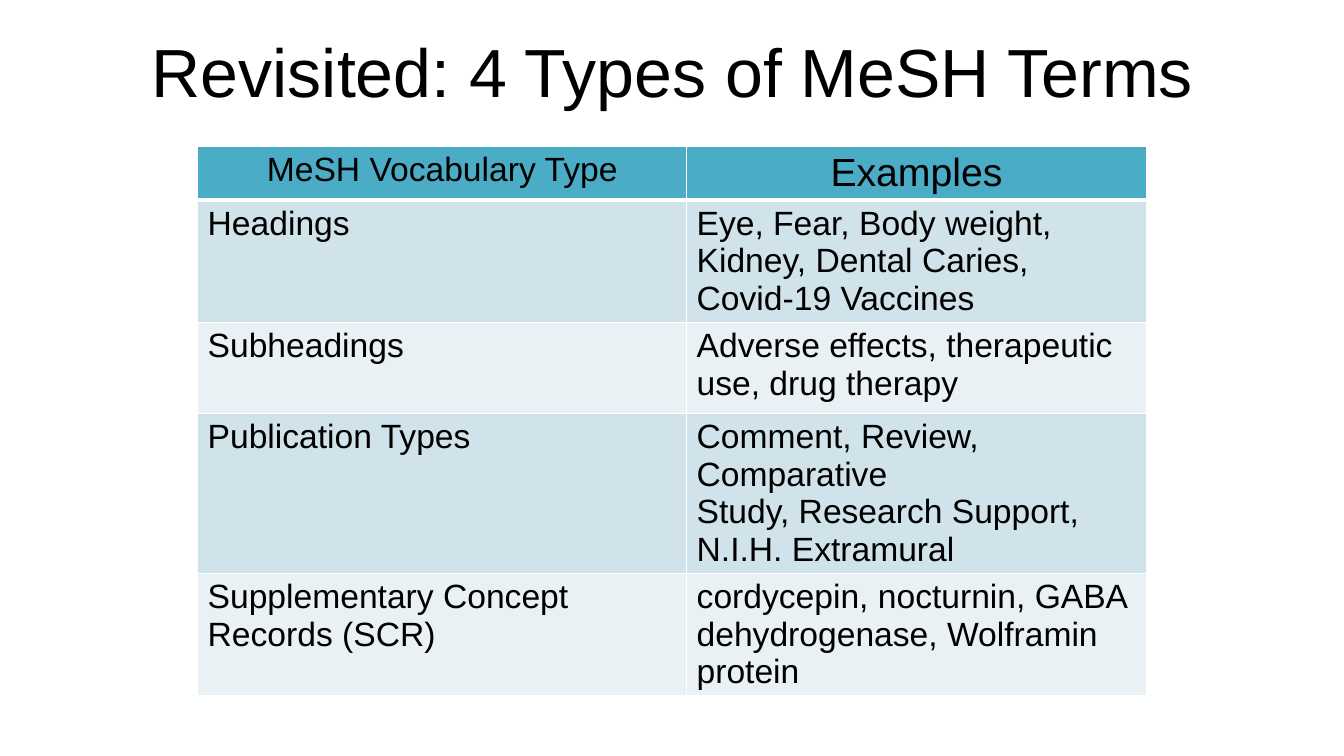
import pptx
import pptx.dml.color
import pptx.enum.text
import pptx.oxml
import pptx.oxml.ns
import pptx.util
from pptx.util import Inches

FONT = "Arial"
HEADER_FILL = "4BACC6"
BAND_FILLS = ["D0E3EA", "E9F1F5"]
COL_WIDTHS = [4.85, 4.56]
ROW_HEIGHTS = [0.52, 0.9, 0.9, 1.07, 0.9]
HEADER = ["MeSH Vocabulary Type", "Examples"]
HEADER_SIZES = [24, 28]
TERM_TYPES = [
    ["Headings", "Eye, Fear, Body weight, Kidney, Dental Caries, Covid-19 Vaccines"],
    ["Subheadings", "Adverse effects, therapeutic use, drug therapy"],
    ["Publication Types",
     "Comment, Review, Comparative\nStudy, Research Support, N.I.H. Extramural"],
    ["Supplementary Concept Records (SCR)",
     "cordycepin, nocturnin, GABA dehydrogenase, Wolframin protein"],
]


def color(value):
    return pptx.dml.color.RGBColor.from_string(value)


def set_text(tf, text, size, align):
    tf.text = text
    for p in tf.paragraphs:
        p.alignment = align
        for r in p.runs:
            r.font.name = FONT
            r.font.size = pptx.util.Pt(size)
            r.font.bold = False
            r.font.color.rgb = color("000000")


def set_borders(cell, widths):
    """Draw white borders; widths maps each side to points."""
    tcPr = cell._tc.get_or_add_tcPr()
    for i, (side, width) in enumerate(widths.items()):
        line = pptx.oxml.parse_xml(
            f'<a:{side} {pptx.oxml.ns.nsdecls("a")} w="{pptx.util.Pt(width)}">'
            f'<a:solidFill><a:srgbClr val="FFFFFF"/></a:solidFill></a:{side}>')
        tcPr.insert(i, line)


def add_title(s, text):
    sp = s.shapes.title
    sp.left, sp.top = Inches(0.92), Inches(0.33)
    sp.width, sp.height = Inches(11.5), Inches(0.84)
    tf = sp.text_frame
    tf.vertical_anchor = pptx.enum.text.MSO_ANCHOR.MIDDLE
    tf.auto_size = pptx.enum.text.MSO_AUTO_SIZE.NONE
    set_text(tf, text, 48.6, pptx.enum.text.PP_ALIGN.CENTER)
    tf.paragraphs[0].line_spacing = 0.9


def add_terms_table(s):
    rows = [HEADER] + TERM_TYPES
    table = s.shapes.add_table(
        len(rows), len(COL_WIDTHS), Inches(1.96), Inches(1.45),
        Inches(sum(COL_WIDTHS)), Inches(sum(ROW_HEIGHTS))).table
    for column, width in zip(table.columns, COL_WIDTHS):
        column.width = Inches(width)
    for row, height in zip(table.rows, ROW_HEIGHTS):
        row.height = Inches(height)

    for i, texts in enumerate(rows):
        is_header = i == 0
        fill = HEADER_FILL if is_header else BAND_FILLS[(i - 1) % 2]
        align = pptx.enum.text.PP_ALIGN.CENTER if is_header else pptx.enum.text.PP_ALIGN.LEFT
        for j, text in enumerate(texts):
            cell = table.cell(i, j)
            cell.fill.solid()
            cell.fill.fore_color.rgb = color(fill)
            set_text(cell.text_frame, text, HEADER_SIZES[j] if is_header else 24, align)
            # The rule under the header is heavier than the others
            set_borders(cell, {"lnL": 1, "lnR": 1, "lnT": 3 if i == 1 else 1,
                               "lnB": 3 if is_header else 1})


def main():
    prs = pptx.Presentation()
    prs.slide_width, prs.slide_height = Inches(13.33), Inches(7.5)
    s = prs.slides.add_slide(prs.slide_layouts[5])

    # Title
    add_title(s, "Revisited: 4 Types of MeSH Terms")

    # Table of vocabulary types
    add_terms_table(s)

    prs.save("out.pptx")


if __name__ == "__main__":
    main()
